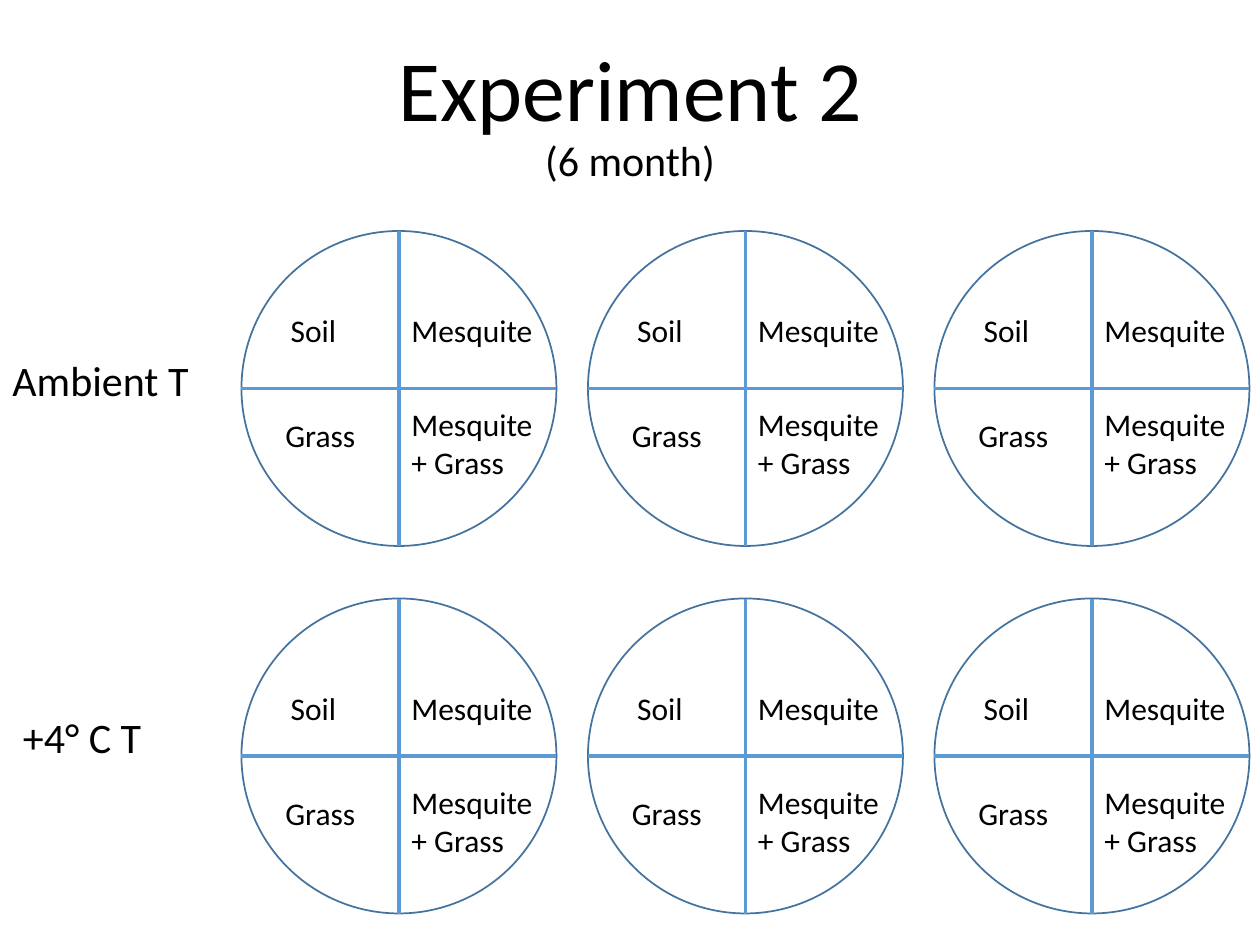
from lxml import etree
from pptx import Presentation
from pptx.dml.color import RGBColor
from pptx.enum.shapes import MSO_CONNECTOR, MSO_SHAPE
from pptx.enum.text import MSO_ANCHOR, MSO_AUTO_SIZE, PP_ALIGN
from pptx.oxml.ns import qn
from pptx.util import Inches, Pt

STRAIGHT = MSO_CONNECTOR.STRAIGHT
OVAL = MSO_SHAPE.OVAL
MIDDLE = MSO_ANCHOR.MIDDLE
FIT_SHAPE, NO_FIT = MSO_AUTO_SIZE.SHAPE_TO_FIT_TEXT, MSO_AUTO_SIZE.NONE
LEFT, CENTER = PP_ALIGN.LEFT, PP_ALIGN.CENTER

COLUMNS, ROWS = 120, 90  # square grid cells, twelve to the inch
DIAMETER = 30
DISH_LEFTS = [23 + 33 * i for i in range(3)]

# treatment, offset from the dish's left and top, width, height, wraps
QUADRANTS = [
    ("Soil", 3.5, 7, 6.8, 4.8, False),
    ("Mesquite", 15, 7, 14, 4.8, False),
    ("Grass", 3, 17, 9.1, 4.8, False),
    ("Mesquite + Grass", 15, 16, 14, 8.5, True),
]
# temperature, label box, top of the dishes, downward shift of their labels
TEMPERATURES = [
    ("Ambient T", (0, 33.2, 19.3, 6), 22, 0),
    ("+4° C T", (1, 67.2, 13.8, 6), 57, 1),
]


def color(hex_code):
    return RGBColor.from_string(hex_code)


def cells(*counts):
    """Turn numbers of grid cells into lengths."""
    return [Inches(count / 12) for count in counts]


class ExperimentSlide:
    FONT = "Calibri"
    TEXT, OUTLINE, DIVIDER = "000000", "43739E", "5B9BD5"

    def __init__(self, presentation):
        self.slide = presentation.slides.add_slide(presentation.slide_layouts[5])

    def style(self, font, size):
        font.name, font.size = self.FONT, Pt(size)
        font.color.rgb = color(self.TEXT)

    def title(self, heading, duration):
        title = self.slide.shapes.title
        title.left, title.top, title.width, title.height = cells(6, 3.6, 108, 15)
        frame = title.text_frame
        frame.auto_size, frame.vertical_anchor = NO_FIT, MIDDLE
        paragraph = frame.paragraphs[0]
        paragraph.alignment, paragraph.line_spacing = CENTER, 0.9
        for text, size in ((heading, 49), (duration, 24)):
            if paragraph.runs:
                paragraph.add_line_break()
            run = paragraph.add_run()
            run.text = text
            self.style(run.font, size)

    def label(self, text, box, size, wraps=False):
        frame = self.slide.shapes.add_textbox(*cells(*box)).text_frame
        frame.word_wrap, frame.auto_size = wraps, FIT_SHAPE
        paragraph = frame.paragraphs[0]
        paragraph.text, paragraph.alignment = text, LEFT
        self.style(paragraph.font, size)

    def divider(self, group, *ends):
        line = group.shapes.add_connector(STRAIGHT, *cells(*ends))
        line.line.color.rgb, line.line.width = color(self.DIVIDER), Pt(2)
        etree.SubElement(line.element.spPr, qn("a:effectLst"))

    def dish(self, left, top):
        """Draw a circle cut into quarters."""
        group = self.slide.shapes.add_group_shape()
        circle = group.shapes.add_shape(OVAL, *cells(left, top, DIAMETER, DIAMETER))
        circle.shadow.inherit = False
        circle.fill.background()
        circle.line.color.rgb, circle.line.width = color(self.OUTLINE), Pt(1)
        middle_x, middle_y = left + DIAMETER / 2, top + DIAMETER / 2
        self.divider(group, middle_x, top, middle_x, top + DIAMETER)
        self.divider(group, left + DIAMETER, middle_y, left, middle_y)


def main():
    presentation = Presentation()
    presentation.slide_width, presentation.slide_height = cells(COLUMNS, ROWS)
    experiment = ExperimentSlide(presentation)
    experiment.title("Experiment 2", "(6 month)")
    for temperature, box, top, shift in TEMPERATURES:
        experiment.label(temperature, box, 24)
        for left in DISH_LEFTS:
            experiment.dish(left, top)
            for treatment, dx, dy, width, height, wraps in QUADRANTS:
                place = (left + dx, top + dy + shift, width, height)
                experiment.label(treatment, place, 18, wraps)
    presentation.save("out.pptx")


if __name__ == "__main__":
    main()
